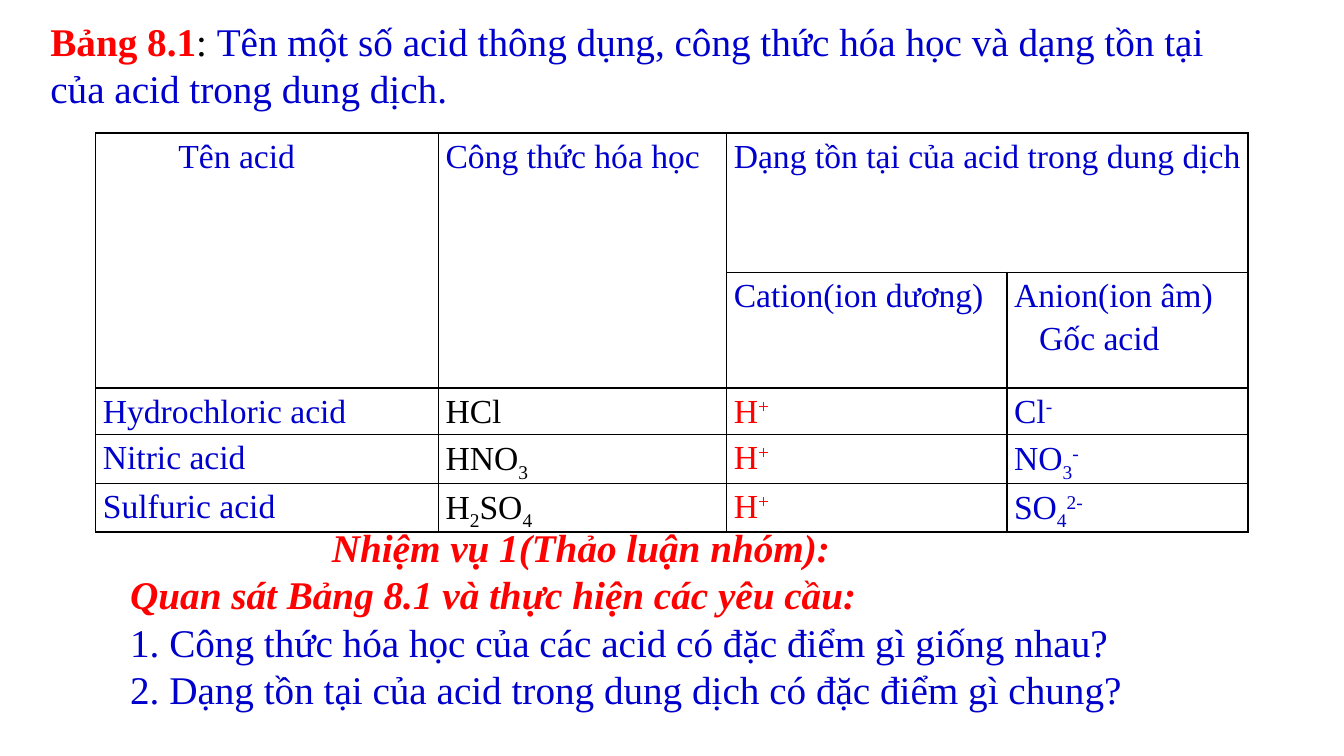
from itertools import groupby

from lxml import etree
from pptx import Presentation
from pptx import util as u
from pptx.dml.color import RGBColor
from pptx.enum import text
from pptx.oxml import ns

SLIDE_W, SLIDE_H = u.Inches(13.33), u.Inches(7.5)
BLUE, RED, BLACK = "0000CC", "FF0000", "000000"
BASELINES = {"_": "-25000", "^": "30000"}

# Table grid, in percent of the slide's width and height
ACID_COLUMNS = [25.5, 21.45, 20.85, 17.93]
ACID_ROWS = [18.4, 15.33] + [6.13] * 3

# Each _ or ^ lowers or raises the one character after it
ACIDS = [
    ("Hydrochloric acid", "HCl", "H^+", "Cl^-"),
    ("Nitric acid", "HNO_3", "H^+", "NO_3^‑"),
    ("Sulfuric acid", "H_2SO_4", "H^+", "SO_4^2^-"),
]
ACID_COLOURS = [BLUE, BLACK, RED, BLUE]


# Helpers
def wide(percent):
    return round(SLIDE_W * percent / 100)


def tall(percent):
    return round(SLIDE_H * percent / 100)


def colour(hex_code):
    return RGBColor.from_string(hex_code)


def apply(target, formats):
    for name, value in formats.items():
        setattr(target, name, value)


def add_run(paragraph, words, hex_code, size=28, strong=False, slanted=False):
    run = paragraph.add_run()
    run.text = words
    apply(run.font, {"name": "Times New Roman", "size": u.Pt(size),
                     "bold": strong, "italic": slanted})
    run.font.color.rgb = colour(hex_code)
    return run


def add_formula(paragraph, formula, hex_code):
    marked = [(char, formula[i - 1] if i else "")
              for i, char in enumerate(formula) if char not in BASELINES]
    for level, group in groupby(marked, key=lambda pair: BASELINES.get(pair[1])):
        run = add_run(paragraph, "".join(char for char, _ in group), hex_code, 24)
        if level:
            run._r.get_or_add_rPr().set("baseline", level)


def set_paragraph(paragraph, spacing=1.0, indent=0):
    apply(paragraph, {"alignment": text.PP_ALIGN.LEFT, "line_spacing": spacing,
                      "space_before": u.Pt(0), "space_after": u.Pt(0)})
    properties = paragraph._p.get_or_add_pPr()
    properties.set("marL", str(u.Inches(indent)))
    properties.set("indent", "0")
    etree.SubElement(properties, ns.qn("a:buNone"))


def place(holder, left, top, width, height, bottom_inset=0.05):
    apply(holder, {"left": wide(left), "top": tall(top),
                   "width": wide(width), "height": tall(height)})
    apply(holder.text_frame, {
        "word_wrap": True, "auto_size": text.MSO_AUTO_SIZE.NONE,
        "vertical_anchor": text.MSO_ANCHOR.MIDDLE,
        "margin_left": u.Inches(0.1), "margin_right": u.Inches(0.1),
        "margin_top": u.Inches(0.05), "margin_bottom": u.Inches(bottom_inset)})
    return holder.text_frame


def draw_borders(cell):
    properties = cell._tc.get_or_add_tcPr()
    for side in ("lnL", "lnR", "lnT", "lnB"):
        line = etree.SubElement(properties, ns.qn(f"a:{side}"), w=str(u.Pt(1)))
        fill = etree.SubElement(line, ns.qn("a:solidFill"))
        etree.SubElement(fill, ns.qn("a:srgbClr"), val=BLACK)


def write_cell(cell, lines, hex_code=BLUE):
    """Write lines given as (words, indent in inches)."""
    for i, (words, indent) in enumerate(lines):
        paragraph = cell.text_frame.add_paragraph() if i else cell.text_frame.paragraphs[0]
        set_paragraph(paragraph, 1.15, indent)
        add_formula(paragraph, words, hex_code)


# Parts of the slide
def add_caption(slide):
    frame = place(slide.shapes.title, 3, 2.67, 89.5, 17.6, bottom_inset=0.5)
    caption = frame.paragraphs[0]
    set_paragraph(caption)
    add_run(caption, "Bảng 8.1", RED, strong=True)
    add_run(caption, ": ", BLACK)
    add_run(caption, "Tên một số acid thông dụng, công thức hóa học và dạng tồn tại "
                     "của acid trong dung dịch.", BLUE)


def add_task(slide):
    frame = place(slide.placeholders[1], 8.93, 67.33, 81.55, 28.8)
    task_lines = [
        ("Nhiệm vụ 1(Thảo luận nhóm):", RED, 2),
        ("Quan sát Bảng 8.1 và thực hiện các yêu cầu:", RED, 0),
        ("1. Công thức hóa học của các acid có đặc điểm gì giống nhau?", BLUE, 0),
        ("2. Dạng tồn tại của acid trong dung dịch có đặc điểm gì chung?", BLUE, 0),
    ]
    for i, (words, hex_code, indent) in enumerate(task_lines):
        paragraph = frame.add_paragraph() if i else frame.paragraphs[0]
        set_paragraph(paragraph, indent=indent)
        heading = hex_code == RED
        add_run(paragraph, words, hex_code, strong=heading, slanted=heading)


def add_acid_table(slide):
    acids = slide.shapes.add_table(
        len(ACID_ROWS), len(ACID_COLUMNS), wide(7.13), tall(17.6),
        wide(sum(ACID_COLUMNS)), tall(sum(ACID_ROWS))).table
    apply(acids, {"first_row": False, "horz_banding": False})
    for column, share in zip(acids.columns, ACID_COLUMNS):
        column.width = wide(share)
    for row, share in zip(acids.rows, ACID_ROWS):
        row.height = tall(share)
    for cell in acids.iter_cells():
        apply(cell, {"margin_left": u.Inches(0.07), "margin_right": u.Inches(0.07),
                     "margin_top": 0, "margin_bottom": 0})
        draw_borders(cell)
        cell.fill.background()

    # Two-level header
    for start, end in [((0, 0), (1, 0)), ((0, 1), (1, 1)), ((0, 2), (0, 3))]:
        acids.cell(*start).merge(acids.cell(*end))
    headers = {
        (0, 0): [("Tên acid", 0.75)],
        (0, 1): [("Công thức hóa học", 0)],
        (0, 2): [("Dạng tồn tại của acid trong dung dịch", 0)],
        (1, 2): [("Cation(ion dương)", 0)],
        (1, 3): [("Anion(ion âm)", 0), ("Gốc acid", 0.25)],
    }
    for position, lines in headers.items():
        write_cell(acids.cell(*position), lines)

    # One row per acid
    for r, acid in enumerate(ACIDS, start=2):
        for c, (words, hex_code) in enumerate(zip(acid, ACID_COLOURS)):
            write_cell(acids.cell(r, c), [(words, 0)], hex_code)


def main():
    deck = Presentation()
    apply(deck, {"slide_width": SLIDE_W, "slide_height": SLIDE_H})
    slide = deck.slides.add_slide(deck.slide_layouts[1])
    add_caption(slide)
    add_task(slide)
    add_acid_table(slide)
    deck.save("out.pptx")


if __name__ == "__main__":
    main()
